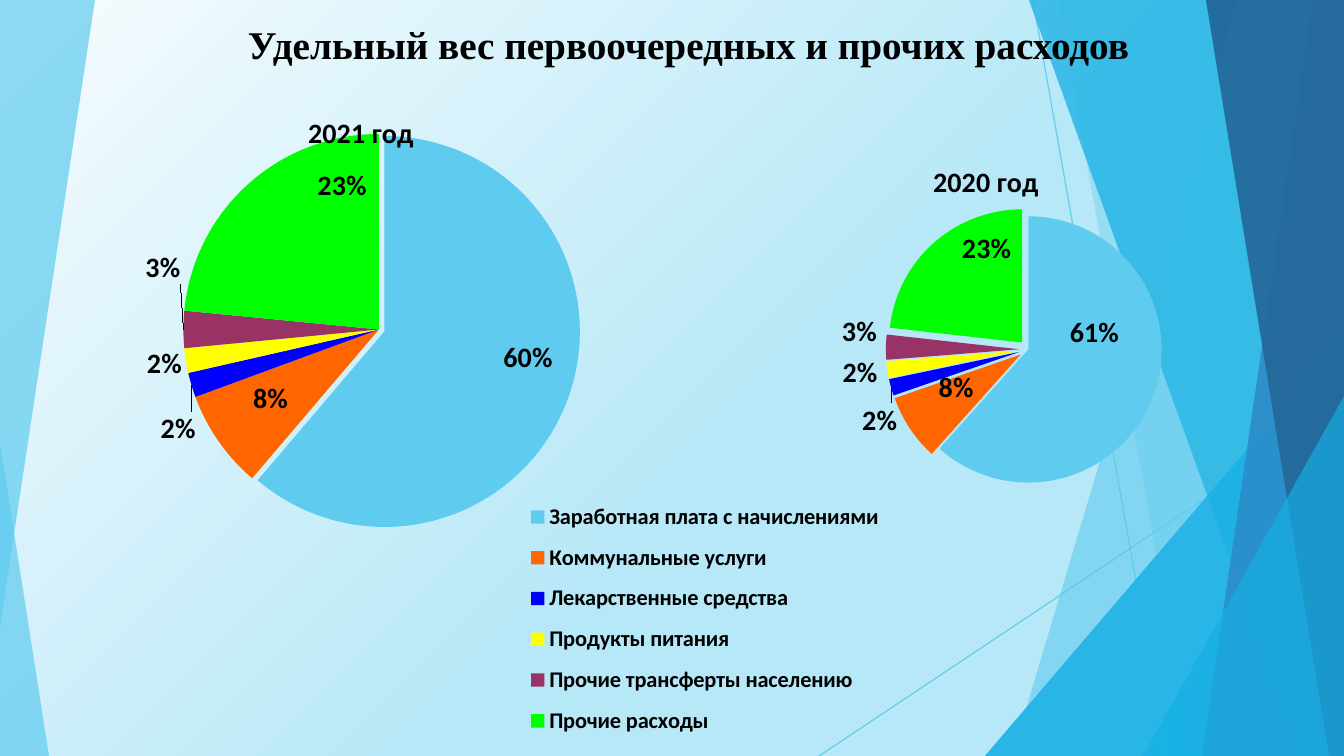
from lxml import etree
from pptx import Presentation
from pptx.chart.data import CategoryChartData
from pptx.dml.color import RGBColor
from pptx.enum.chart import XL_CHART_TYPE, XL_LABEL_POSITION, XL_LEGEND_POSITION
from pptx.enum.shapes import MSO_CONNECTOR, MSO_SHAPE
from pptx.oxml import parse_xml
from pptx.oxml.ns import nsdecls, qn
from pptx.util import Pt

PIE = XL_CHART_TYPE.PIE
MID, OUT = XL_LABEL_POSITION.CENTER, XL_LABEL_POSITION.OUTSIDE_END
RIGHT = XL_LEGEND_POSITION.RIGHT
LINE, TRI = MSO_CONNECTOR.STRAIGHT, MSO_SHAPE.ISOSCELES_TRIANGLE

PX = 914400 / 100.8
WIDE, HIGH = 1344, 756
THEME = {
    "sky": "5FCBEF", "cyan": "17B0E4", "blue": "2E83C3", "navy": "226292",
    "pale": "F7FCFE", "ice": "B7E8F8", "ink": "000000",
    "head": 28, "label": 20, "key": 16, "base": 10,
    "serif": "Times New Roman", "sans": "Calibri",
}
INK = RGBColor.from_string(THEME["ink"])
SLICES = [
    ("Заработная плата с начислениями", "5FCBEF", MID),
    ("Коммунальные услуги", "FF6600", MID),
    ("Лекарственные средства", "0000FF", OUT),
    ("Продукты питания", "FFFF00", OUT),
    ("Прочие трансферты населению", "993366", OUT),
    ("Прочие расходы", "00FF00", MID),
]
# kind, colour, opacity, geometry in px (triangles: left, top, width, height, apex)
FACETS = [
    ("line", "sky", 70, (1033, 0, 1167, 756)),
    ("line", "sky", 70, (1344, 406, 819, 756)),
    ("band", "sky", 36, (1238, 1012)),
    ("band", "sky", 20, (1058, 1192)),
    ("tri", "cyan", 66, (985, 336, 359, 420, 1)),
    ("band", "cyan", 50, (1029, 1301)),
    ("band", "blue", 70, (1313, 1202)),
    ("band", "navy", 80, (1206, 1329)),
    ("tri", "cyan", 66, (1143, 396, 201, 360, 1)),
]
EDGE = [
    ("tri", "sky", 70, (0, 443, 49, 313, 0)),
    ("wedge", "sky", 70, [(0, 0), (95, 0), (0, 627)]),
]
# box, plot, title corner in px; explosion of series and of first slice; label shifts
PIES = [
    {"name": "2020 год", "vals": (61, 8, 2, 2, 3, 23), "box": (482, 137, 862, 619),
     "plot": (799, 207, 459, 285), "title": (928, 157), "burst": (7, 0), "key": (522, 490, 366, 258),
     "shift": [(4, -41), (-9, -4), (12, 14), (-4, -15), (-3, -16), (9, -44)]},
    {"name": "2021 год", "vals": (60, 8, 2, 2, 3, 23), "box": (0, 74, 672, 554),
     "plot": (90, 134, 578, 391), "title": (303, 108), "burst": (0, 3), "key": None,
     "shift": [(52, -8), (-28, 13), (10, 25), (2, -15), (3, -62), (29, -72)]},
]


def fade(item, pct):
    """Make the item's colours pct percent opaque and drop its shadow."""
    props = item._element.spPr
    for tint in props.iter(qn("a:srgbClr")):
        etree.SubElement(tint, qn("a:alpha")).set("val", str(pct * 1000))
    if props.find(qn("a:effectLst")) is None:
        etree.SubElement(props, qn("a:effectLst"))


def place(node, box, spot, mode="edge"):
    """Give a chart part a manual layout: spot in px, as shares of the chart box."""
    left, top, wide, high = box
    if mode == "edge":
        spot = (spot[0] - left, spot[1] - top, *spot[2:])
    old = node.find(qn("c:layout"))
    if old is not None:
        node.remove(old)
    plot = node.tag == qn("c:plotArea")
    tags = [("layoutTarget", "inner")] if plot else []
    if mode == "edge":
        tags += [("xMode", "edge"), ("yMode", "edge")]
    tags += [(tag, f"{size / whole:.4f}")
             for tag, size, whole in zip("xywh", spot, (wide, high, wide, high))]
    body = "".join(f'<c:{tag} val="{val}"/>' for tag, val in tags)
    node.insert(0 if plot else 1, parse_xml(
        f'<c:layout {nsdecls("c")}><c:manualLayout>{body}</c:manualLayout></c:layout>'))


deck = Presentation()
deck.slide_width, deck.slide_height = round(WIDE * PX), round(HIGH * PX)
slide = deck.slides.add_slide(deck.slide_layouts[6])
shapes = slide.shapes

back = slide.background.fill
back.gradient()
back.gradient_angle = 315
for stop, tone, pos in zip(back.gradient_stops, ("pale", "ice"), (0, 0.57)):
    stop.color.rgb = RGBColor.from_string(THEME[tone])
    stop.position = pos

# The right-hand facets lie in two layers, which deepens their colour
for kind, tone, pct, geo in FACETS + EDGE + FACETS:
    color = RGBColor.from_string(THEME[tone])
    if kind == "line":
        item = shapes.add_connector(LINE, *[round(v * PX) for v in geo])
        item.line.color.rgb = color
        item.line.width = Pt(0.75)
    else:
        if kind == "tri":
            item = shapes.add_shape(TRI, *[round(v * PX) for v in geo[:4]])
            item.adjustments[0] = geo[4]
        else:
            if kind == "band":
                geo = [(geo[0], 0), (WIDE, 0), (WIDE, HIGH), (geo[1], HIGH)]
            dots = [(round(x * PX), round(y * PX)) for x, y in geo]
            path = shapes.build_freeform(*dots[0], scale=1.0)
            path.add_line_segments(dots[1:], close=True)
            item = path.convert_to_shape()
        item.fill.solid()
        item.fill.fore_color.rgb = color
        item.line.fill.background()
    fade(item, pct)

for pie in PIES:
    box = pie["box"]
    data = CategoryChartData(number_format="0")
    data.categories = [name for name, _, _ in SLICES]
    data.add_series(pie["name"], pie["vals"])
    chart = shapes.add_chart(PIE, *[round(v * PX) for v in box], data).chart
    chart.font.size = Pt(THEME["base"])
    chart.font.name = THEME["sans"]
    chart.font.color.rgb = INK
    root = chart._chartSpace
    root.find(qn("c:chart")).addnext(parse_xml(
        f'<c:spPr {nsdecls("c", "a")}><a:noFill/><a:ln><a:noFill/></a:ln></c:spPr>'))
    place(next(root.iter(qn("c:plotArea"))), box, pie["plot"])

    chart.has_title = True
    run = chart.chart_title.text_frame.paragraphs[0].add_run()
    run.text = pie["name"]
    fonts = [(run.font, "label")]
    place(chart.chart_title._element, box, pie["title"])

    chart.has_legend = pie["key"] is not None
    if chart.has_legend:
        chart.legend.position = RIGHT
        chart.legend.include_in_layout = False
        fonts.append((chart.legend.font, "key"))
        place(chart.legend._element, box, pie["key"])

    plot = chart.plots[0]
    plot.vary_by_categories = True
    plot.has_data_labels = True
    plot.data_labels.number_format = '0"%"'
    plot.data_labels.number_format_is_linked = False
    ser = plot.series[0]
    for i, (_, tone, pos) in enumerate(SLICES):
        point = ser.points[i]
        point.format.fill.solid()
        point.format.fill.fore_color.rgb = RGBColor.from_string(tone)
        point.data_label.position = pos
        fonts.append((point.data_label.font, "label"))
    for font, size in fonts:
        font.size = Pt(THEME[size])
        font.bold = True
        font.name = THEME["sans"]
        font.color.rgb = INK
    for label, shift in zip(ser._element.iter(qn("c:dLbl")), pie["shift"]):
        label.insert(1, parse_xml(
            f'<c:numFmt {nsdecls("c")} formatCode="0&quot;%&quot;" sourceLinked="0"/>'))
        place(label, box, shift, "factor")
    heads = (ser._element.find(qn("c:tx")), ser._element.find(qn("c:dPt")).find(qn("c:idx")))
    for head, burst in zip(heads, pie["burst"]):
        head.addnext(parse_xml(f'<c:explosion {nsdecls("c")} val="{burst}"/>'))

title = shapes.add_textbox(*[round(v * PX) for v in (238, 15, 920, 57)])
title.text_frame.word_wrap = True
run = title.text_frame.paragraphs[0].add_run()
run.text = "Удельный вес первоочередных и прочих расходов"
run.font.size = Pt(THEME["head"])
run.font.name = THEME["serif"]
run.font.bold = True
run.font.color.rgb = INK

deck.save("out.pptx")
